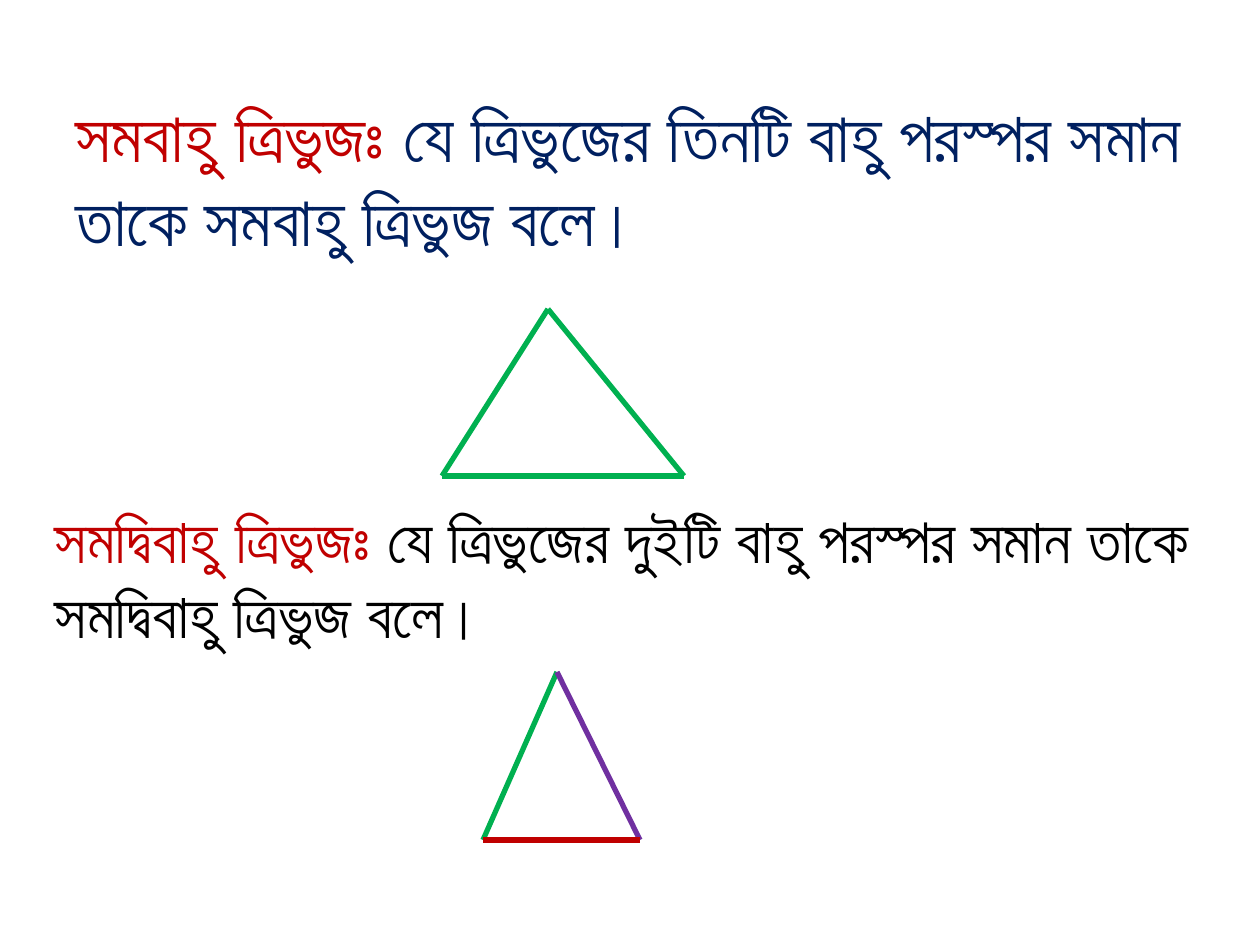
from dataclasses import dataclass

import lxml.etree
import pptx
import pptx.dml.color
import pptx.enum.shapes
import pptx.enum.text
import pptx.oxml.ns
import pptx.util

PX_PER_INCH = 126


@dataclass(frozen=True)
class Theme:
    font: str = "Arial"
    term: str = "C00000"
    navy: str = "002060"
    black: str = "000000"
    green: str = "00B050"
    purple: str = "7030A0"
    red: str = "C00000"
    large: int = 40
    medium: int = 36
    side_width: int = 3


THEME = Theme()


def px(length):
    return pptx.util.Emu(round(length * 914400 / PX_PER_INCH))


def rgb(value):
    return pptx.dml.color.RGBColor.from_string(value)


def add_run(paragraph, text, *, size, color, bold=False):
    run = paragraph.add_run()
    run.text = text
    run.font.name = THEME.font
    run.font.size = pptx.util.Pt(size)
    run.font.bold = bold
    run.font.color.rgb = rgb(color)


def add_definition(slide, box, term, meaning, *, size, color):
    """Write a highlighted term followed by its meaning."""
    definition = slide.shapes.add_textbox(*map(px, box)).text_frame
    definition.word_wrap = True
    definition.auto_size = pptx.enum.text.MSO_AUTO_SIZE.SHAPE_TO_FIT_TEXT
    paragraph = definition.paragraphs[0]
    add_run(paragraph, term + " ", size=size, color=THEME.term, bold=True)
    add_run(paragraph, meaning, size=size, color=color)


def add_side(slide, start, end, color):
    side = slide.shapes.add_connector(
        pptx.enum.shapes.MSO_CONNECTOR.STRAIGHT, *map(px, start + end))
    side.line.color.rgb = rgb(color)
    side.line.width = pptx.util.Pt(THEME.side_width)
    lxml.etree.SubElement(side.element.spPr, pptx.oxml.ns.qn("a:effectLst"))


def add_triangle(slide, left, apex, right, colors):
    """Draw the left, right and base sides, coloured in that order."""
    sides = ((left, apex), (apex, right), (left, right))
    for (start, end), color in zip(sides, colors):
        add_side(slide, start, end, color)


def main():
    presentation = pptx.Presentation()
    presentation.slide_width = px(1260)
    presentation.slide_height = px(945)
    slide = presentation.slides.add_slide(presentation.slide_layouts[6])

    # Equilateral triangle
    add_definition(
        slide, (63, 86, 1144, 183), "সমবাহু ত্রিভুজঃ",
        "যে ত্রিভুজের তিনটি বাহু পরস্পর সমান তাকে সমবাহু ত্রিভুজ বলে।",
        size=THEME.large, color=THEME.navy)
    add_triangle(slide, (442, 476), (548, 309), (684, 476),
                 [THEME.green] * 3)

    # Isosceles triangle
    add_definition(
        slide, (42, 494, 1176, 165), "সমদ্বিবাহু ত্রিভুজঃ",
        "যে ত্রিভুজের দুইটি বাহু পরস্পর সমান তাকে সমদ্বিবাহু ত্রিভুজ বলে।",
        size=THEME.medium, color=THEME.black)
    add_triangle(slide, (483, 840), (557, 672), (640, 840),
                 [THEME.green, THEME.purple, THEME.red])

    presentation.save("out.pptx")


if __name__ == "__main__":
    main()
